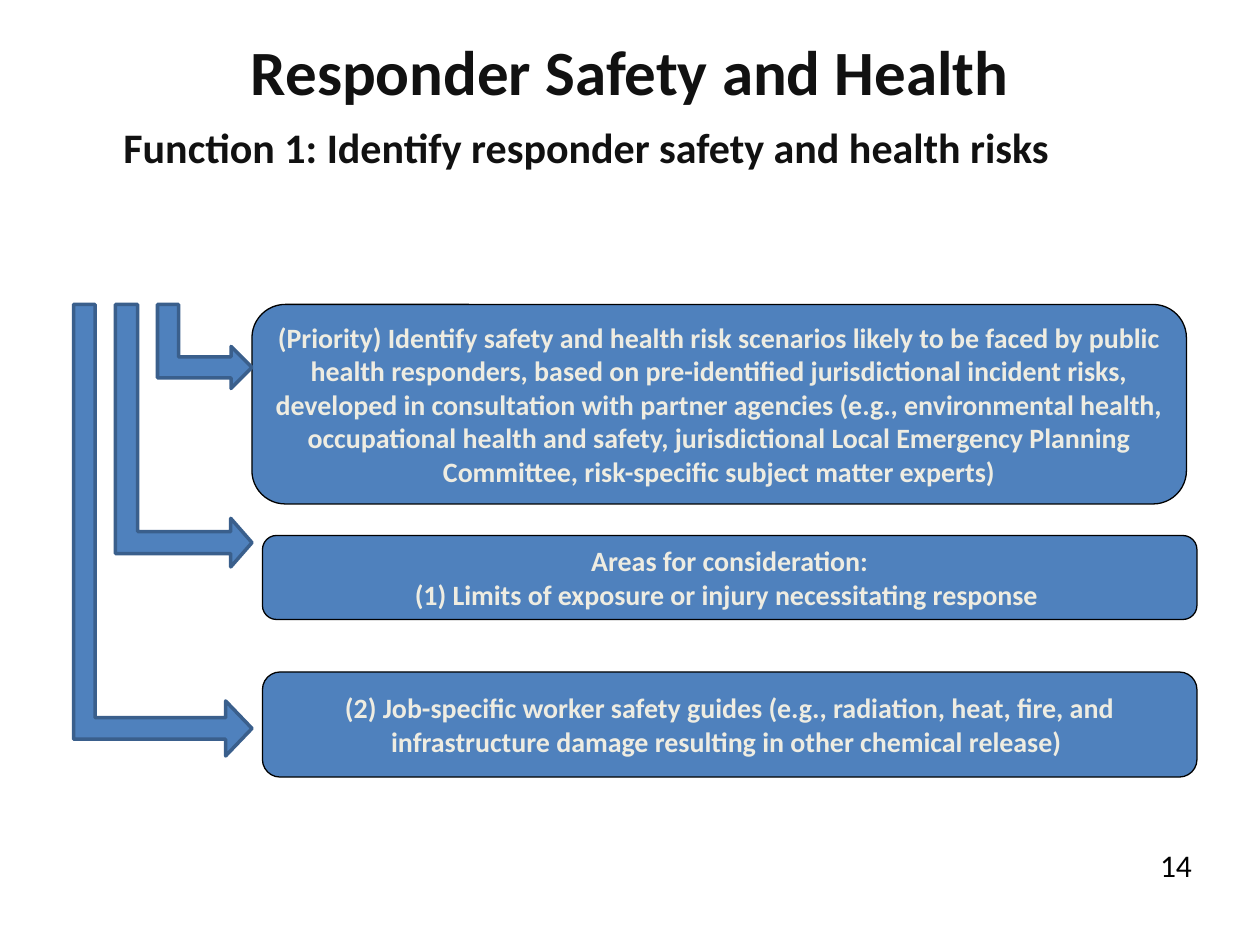
from pptx import Presentation, util as u
from pptx.dml.color import RGBColor
from pptx.enum import shapes, text
from lxml import etree

COLORS = {"title": "111111", "fill": "4F81BD", "box_line": "000000",
          "arrow_line": "3A5F8C", "box_text": "EEECE1", "number": "000000"}

prs = Presentation()
prs.slide_width, prs.slide_height = u.Inches(10), u.Inches(7.5)
CELL = prs.slide_width / 120  # grid of 120 columns by 90 rows
s = prs.slides.add_slide(prs.slide_layouts[1])


def grid(*cells):
    return [round(c * CELL) for c in cells]


def style_text(tf, size, color, bold=True, align=text.PP_ALIGN.CENTER):
    tf.word_wrap = True
    for p in tf.paragraphs:
        p.alignment = align
        for r in p.runs:
            r.font.name, r.font.size, r.font.bold = "Calibri", u.Pt(size), bold
            r.font.color.rgb = RGBColor.from_string(COLORS[color])


# Title and function heading
title, body = s.placeholders
title.left, title.top, title.width, title.height = grid(6, 3.6, 108, 8.4)
title.text_frame.text = "Responder Safety and Health"
title.text_frame.vertical_anchor = text.MSO_ANCHOR.MIDDLE
title.text_frame.paragraphs[0].line_spacing = u.Pt(30)
style_text(title.text_frame, 36, "title")

body.left, body.top, body.width, body.height = grid(6, 11, 108, 13)
body.text_frame.text = "Function 1: Identify responder safety and health risks"
style_text(body.text_frame, 24, "title", align=text.PP_ALIGN.LEFT)
p = body.text_frame.paragraphs[0]
p.space_before = u.Pt(5)
pPr = p._p.get_or_add_pPr()
pPr.set("marL", str(u.Inches(0.38)))
pPr.set("indent", "0")
etree.SubElement(pPr, "{http://schemas.openxmlformats.org/drawingml/2006/main}buNone")

# Boxes and arrows, each as left, top, width, height in grid cells
BOX, ARROW = shapes.MSO_SHAPE.ROUNDED_RECTANGLE, shapes.MSO_SHAPE.BENT_UP_ARROW
parts = [
    (BOX, (24, 29, 89, 19), [0.167],
     "(Priority) Identify safety and health risk scenarios likely to be faced by public "
     "health responders, based on pre-identified jurisdictional incident risks, developed "
     "in consultation with partner agencies (e.g., environmental health, occupational "
     "health and safety, jurisdictional Local Emergency Planning Committee, risk-specific "
     "subject matter experts)"),
    (BOX, (25, 51, 89, 8), [0.167],
     "Areas for consideration:\n(1) Limits of exposure or injury necessitating response "),
    (ARROW, (5, 35, 25, 13), [0.162, 0.178, 0.156], ""),
    (ARROW, (15.5, 28.5, 8, 9), [0.25, 0.25, 0.25], ""),
    (ARROW, (-6, 42, 43, 17), [0.121, 0.154, 0.148], ""),
    (BOX, (25, 64, 89, 10), [0.167],
     "(2) Job-specific worker safety guides (e.g., radiation, heat, fire, and "
     "infrastructure damage resulting in other chemical release) "),
]
for kind, cells, adjustments, words in parts:
    sp = s.shapes.add_shape(kind, *grid(*cells))
    sp.shadow.inherit = False
    for i, value in enumerate(adjustments):
        sp.adjustments[i] = value
    sp.fill.solid()
    sp.fill.fore_color.rgb = RGBColor.from_string(COLORS["fill"])
    line = "box_line" if kind == BOX else "arrow_line"
    sp.line.color.rgb = RGBColor.from_string(COLORS[line])
    sp.line.width = u.Pt(0.75 if kind == BOX else 2)
    if kind == ARROW:
        sp.rotation = 90
    else:
        sp.text_frame.text = words
        sp.text_frame.vertical_anchor = text.MSO_ANCHOR.MIDDLE
        style_text(sp.text_frame, 16, "box_text")

# Slide number
sp = s.shapes.add_textbox(*grid(108, 80, 8, 4.8))
sp.text_frame.text = "14"
style_text(sp.text_frame, 18, "number", bold=False)

prs.save("out.pptx")
